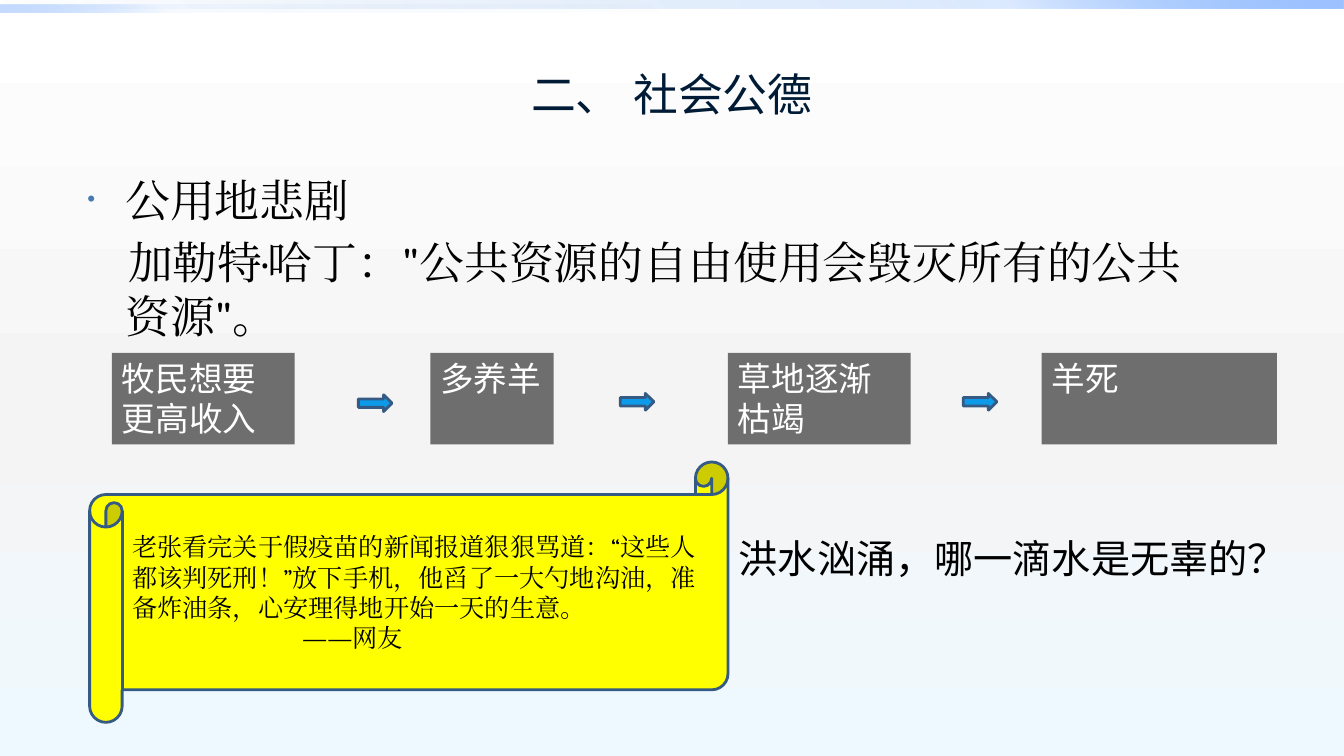
from lxml.etree import SubElement
from pptx import Presentation
from pptx.dml.color import RGBColor
from pptx.enum.shapes import MSO_SHAPE as SHAPE
from pptx.enum.text import MSO_ANCHOR as ANCHOR, PP_ALIGN as ALIGN
from pptx.oxml import parse_xml
from pptx.oxml.ns import nsdecls, qn
from pptx.util import Pt

COLORS = {
    "title": "001B36", "text": "000000", "bullet": "477AB1", "step": "6E6E6E",
    "white": "FFFFFF", "arrow": "0D9BE9", "outline": "355A83", "scroll": "FFFF00",
    "mid": "F4F4F4", "sky": "EEF9FF", "deep": "0058B7", "blue": "4F95FF", "pale": "9EC2FF",
}


def rgb(name):
    return RGBColor.from_string(COLORS[name])


def gradient(stops, angle):
    gs = "".join(
        f'<a:gs pos="{pos * 1000}"><a:srgbClr val="{COLORS[name]}">'
        f'<a:alpha val="{alpha * 1000}"/></a:srgbClr></a:gs>'
        for pos, name, alpha in stops)
    return parse_xml(
        f'<a:gradFill {nsdecls("a")} rotWithShape="1"><a:gsLst>{gs}</a:gsLst>'
        f'<a:lin ang="{angle * 60000}" scaled="0"/></a:gradFill>')


def write(p, text, size, font, color="text", align=ALIGN.LEFT, left=0, first=0,
          before=0, bullet=None):
    p.alignment = align
    p.space_before = Pt(before)
    pPr = p._p.get_or_add_pPr()
    pPr.set("marL", str(Pt(left)))
    pPr.set("indent", str(Pt(first)))
    if bullet:
        clr = SubElement(pPr, qn("a:buClr"))
        SubElement(clr, qn("a:srgbClr"), val=COLORS["bullet"])
        SubElement(pPr, qn("a:buSzPct"), val="50000")
        SubElement(pPr, qn("a:buFont"), typeface="Arial")
        SubElement(pPr, qn("a:buChar"), char=bullet)
    else:
        SubElement(pPr, qn("a:buNone"))
    r = p.add_run()
    r.text = text
    r.font.size = Pt(size)
    r.font.name = font
    r.font.color.rgb = rgb(color)
    rPr = r._r.get_or_add_rPr()
    rPr.set("lang", "zh-CN")
    SubElement(rPr, qn("a:ea"), typeface=font)


def add_box(s, kind, box, fill=None, line=None):
    sp = s.shapes.add_shape(kind, *map(Pt, box))
    sp.shadow.inherit = False
    if fill:
        sp.fill.solid()
        sp.fill.fore_color.rgb = rgb(fill)
    if line:
        sp.line.color.rgb = rgb(line)
        sp.line.width = Pt(2)
    else:
        sp.line.fill.background()
    return sp


def add_text(s, box):
    tf = s.shapes.add_textbox(*map(Pt, box)).text_frame
    tf.word_wrap = True
    return tf


def backdrop(s, width):
    s.background.fill.solid()
    bgPr = s.background._cSld.bg.bgPr
    bgPr.replace(bgPr[0], gradient(
        [(0, "white", 100), (55, "mid", 100), (100, "sky", 100)], 90))
    bars = [((0, 0, width, 6), 20, 100, 315), ((0, 3, width / 2, 6), 5, 60, 135)]
    for box, middle, end, angle in bars:
        spPr = add_box(s, SHAPE.RECTANGLE, box, "pale")._element.spPr
        spPr.replace(spPr.find(qn("a:solidFill")), gradient(
            [(0, "deep", 0), (75, "blue", middle), (100, "pale", end)], angle))


def heading(s, box):
    sp = s.shapes.title
    sp.left, sp.top, sp.width, sp.height = map(Pt, box)
    tf = sp.text_frame
    tf.vertical_anchor = ANCHOR.MIDDLE
    write(tf.paragraphs[0], "二、 社会公德", 32, "Arial", "title", ALIGN.CENTER)


def tragedy(s, box):
    tf = add_text(s, box)
    write(tf.paragraphs[0], "公用地悲剧", 32, "Cambria", left=27, first=-27, bullet="•")
    write(tf.add_paragraph(), "加勒特·哈丁：\"公共资源的自由使用会毁灭所有的公共资源\"。",
          32, "Cambria", left=27, first=2, before=6.4)


def process(s, box):
    x, y, _, h = box
    steps = [(0, 130.5, ["牧民想要更高收入"]), (227.5, 88, ["多养羊"]),
             (440, 130.5, ["草地逐渐", "枯竭"]), (664, 168, ["羊死"])]
    for dx, w, lines in steps:
        tf = add_box(s, SHAPE.RECTANGLE, (x + dx, y, w, h), "step").text_frame
        tf.word_wrap = True
        tf.vertical_anchor = ANCHOR.TOP
        for i, line in enumerate(lines):
            p = tf.add_paragraph() if i else tf.paragraphs[0]
            write(p, line, 24, "Calibri", "white")
    for dx, dy in [(176, 30), (363, 29), (608, 29)]:
        add_box(s, SHAPE.RIGHT_ARROW, (x + dx, y + dy, 24, 12), "arrow", "outline")


def story(s, box):
    tf = add_box(s, SHAPE.HORIZONTAL_SCROLL, box, "scroll", "outline").text_frame
    tf.word_wrap = True
    tf.vertical_anchor = ANCHOR.MIDDLE
    write(tf.paragraphs[0], "老张看完关于假疫苗的新闻报道狠狠骂道：“这些人都该判死刑！”"
          "放下手机，他舀了一大勺地沟油，准备炸油条，心安理得地开始一天的生意。", 18, "Cambria")
    write(tf.add_paragraph(), "——网友", 18, "Cambria", left=121.5)


def question(s, box):
    write(add_text(s, box).paragraphs[0], "洪水汹涌，哪一滴水是无辜的？", 28, "Noto Sans CJK SC")


def main():
    prs = Presentation()
    prs.slide_width, prs.slide_height = Pt(960), Pt(540)
    s = prs.slides.add_slide(prs.slide_layouts[5])
    backdrop(s, 960)
    heading(s, (48, 21.6, 864, 90))
    tragedy(s, (55.4, 119.5, 823.7, 131.8))
    process(s, (80, 252, 832, 65.4))
    story(s, (64, 330, 456, 186))
    question(s, (520.6, 378, 425.5, 41))
    prs.save("out.pptx")


if __name__ == "__main__":
    main()
